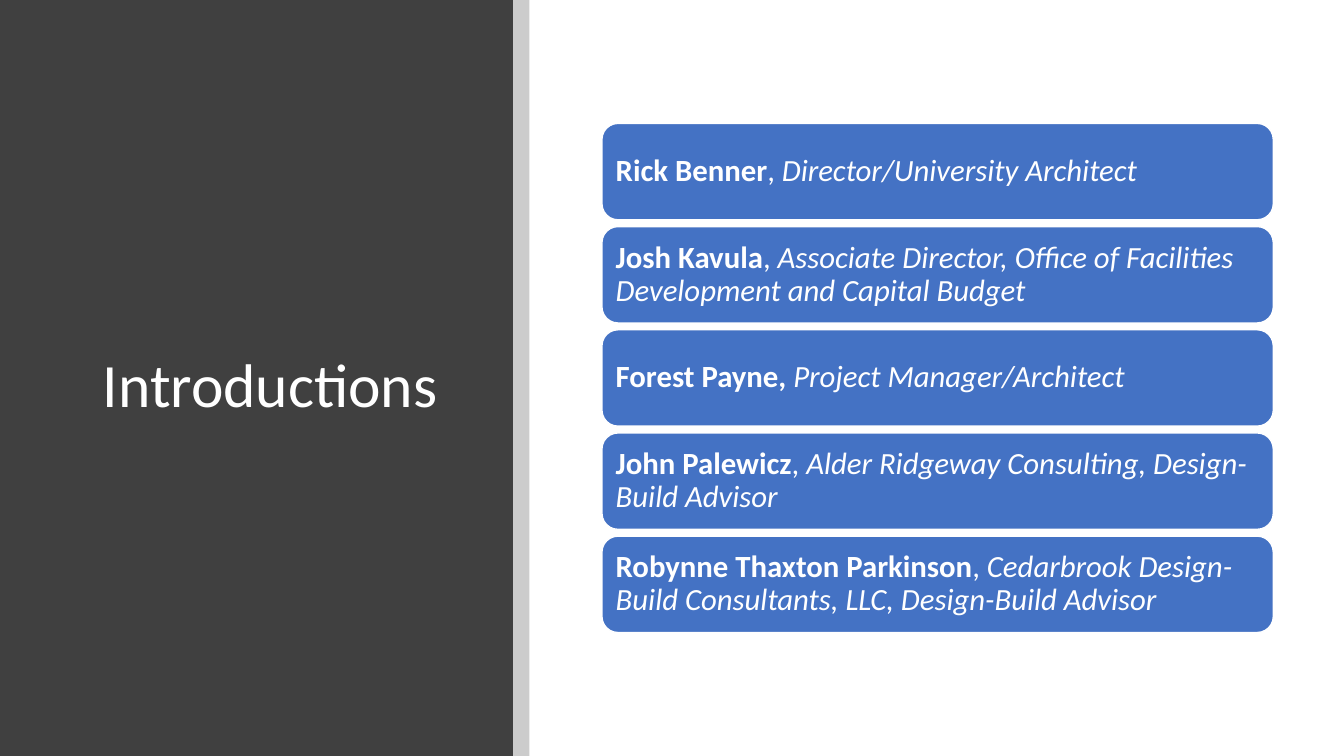
"""Build the Introductions slide: a dark title panel beside five name cards."""
from lxml import etree
from pptx import Presentation, util as u
from pptx.dml.color import RGBColor
from pptx.enum import shapes, text
from pptx.oxml.ns import qn

INK = {"panel": "404040", "strip": "000000", "card": "4472C4", "white": "FFFFFF"}
TEAM = [
    ("Rick Benner", ", ", "Director/University Architect"),
    ("Josh Kavula", ", ",
     "Associate Director, Office of Facilities Development and Capital Budget"),
    ("Forest Payne, ", "", "Project Manager/Architect"),
    ("John Palewicz", ", ", "Alder Ridgeway Consulting, Design-Build Advisor"),
    ("Robynne Thaxton Parkinson", ", ",
     "Cedarbrook Design-Build Consultants, LLC, Design-Build Advisor"),
]
TOP, STEP = 3.11, 2.6

deck = Presentation()
deck.slide_width, deck.slide_height = u.Cm(33.87), u.Cm(19.05)
slide = deck.slides.add_slide(deck.slide_layouts[6])


def add_box(kind, left, top, width, height, ink):
    box = slide.shapes.add_shape(kind, *map(u.Cm, (left, top, width, height)))
    box.shadow.inherit = False
    box.fill.solid()
    box.fill.fore_color.rgb = RGBColor.from_string(INK[ink])
    box.line.fill.background()
    return box


def set_text(frame, size):
    frame.word_wrap = True
    frame.vertical_anchor = text.MSO_ANCHOR.MIDDLE
    para = frame.paragraphs[0]
    para.alignment = text.PP_ALIGN.LEFT
    para.line_spacing = 0.9
    para.font.name = "Calibri"
    para.font.size = u.Pt(size)
    para.font.color.rgb = RGBColor.from_string(INK["white"])
    return para


add_box(shapes.MSO_SHAPE.RECTANGLE, 0, 0, 12.93, 19.05, "panel")

title = slide.shapes.add_textbox(u.Cm(2.34), u.Cm(2.26), u.Cm(9.27), u.Cm(15.01))
set_text(title.text_frame, 44).add_run().text = "Introductions"

strip = add_box(shapes.MSO_SHAPE.RECTANGLE, 12.93, 0, 0.41, 19.05, "strip")
shade = strip.fill._xPr.find(".//" + qn("a:srgbClr"))
etree.SubElement(shade, qn("a:alpha"), val="20000")

for row, (name, comma, role) in enumerate(TEAM):
    card = add_box(shapes.MSO_SHAPE.ROUNDED_RECTANGLE,
                   15.17, TOP + row * STEP, 16.92, 2.43, "card")
    card.line.color.rgb = RGBColor.from_string(INK["white"])
    card.line.width = u.Pt(1)
    frame = card.text_frame
    frame.margin_left = frame.margin_right = u.Cm(0.23)
    frame.margin_top = frame.margin_bottom = u.Cm(0.23)
    para = set_text(frame, 22)
    for part, bold, slant in ((name, True, False), (comma, False, False),
                              (role, False, True)):
        if part:
            run = para.add_run()
            run.text = part
            run.font.bold, run.font.italic = bold, slant

deck.save("out.pptx")
